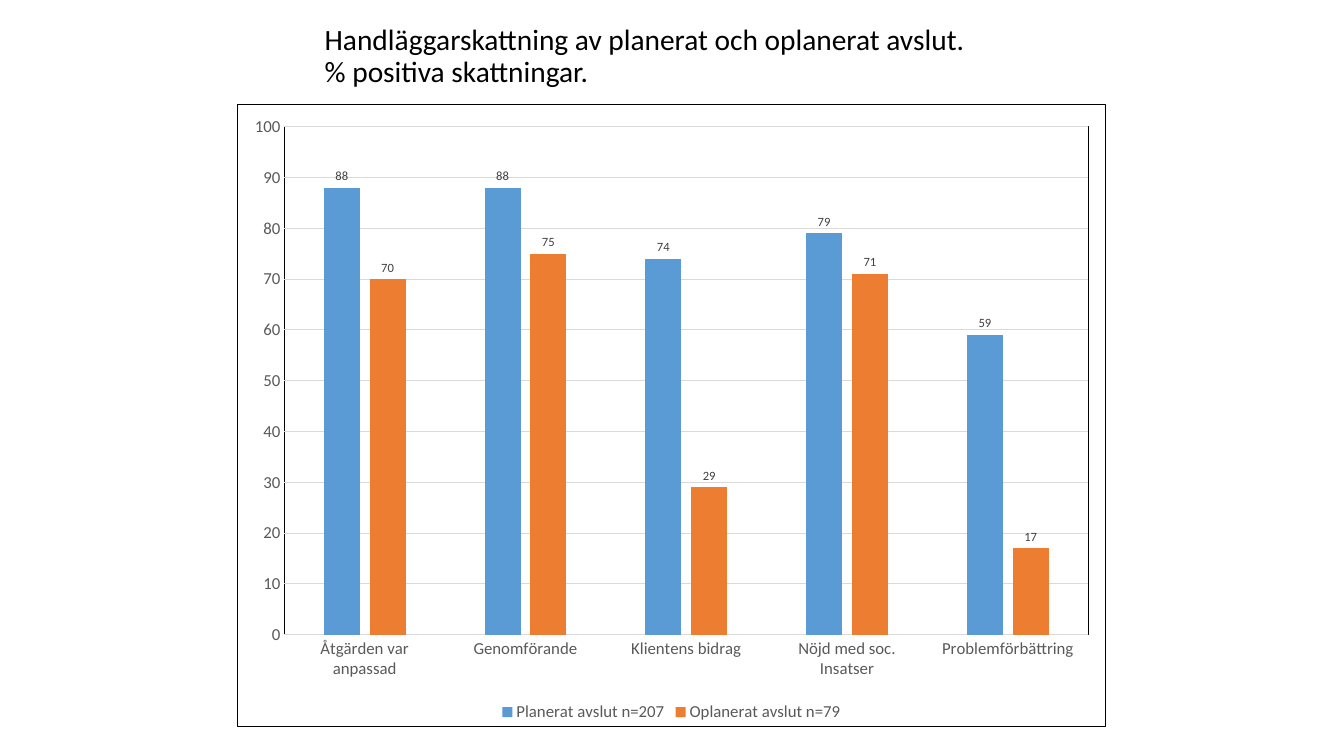
from lxml import etree
from pptx import Presentation
from pptx.chart.data import CategoryChartData
from pptx.dml.color import RGBColor
from pptx.enum.chart import XL_CHART_TYPE, XL_LABEL_POSITION, XL_LEGEND_POSITION, XL_TICK_MARK
from pptx.enum.text import MSO_ANCHOR, MSO_AUTO_SIZE, PP_ALIGN
from pptx.oxml import parse_xml
from pptx.oxml.ns import nsdecls
from pptx.util import Inches, Pt

COLUMNS = XL_CHART_TYPE.COLUMN_CLUSTERED
OUTSIDE = XL_LABEL_POSITION.OUTSIDE_END
BOTTOM_LEGEND = XL_LEGEND_POSITION.BOTTOM
NO_TICK = XL_TICK_MARK.NONE
ANCHOR_BOTTOM = MSO_ANCHOR.BOTTOM
NO_AUTOFIT = MSO_AUTO_SIZE.NONE
LEFT = PP_ALIGN.LEFT

COLORS = {
    "text": "000000",
    "axis": "595959",
    "label": "404040",
    "grid": "D9D9D9",
    "border": "000000",
    "planned": "5B9BD5",
    "unplanned": "ED7D31",
}
CATEGORIES = ["Åtgärden var anpassad", "Genomförande", "Klientens bidrag",
              "Nöjd med soc. Insatser", "Problemförbättring"]
SERIES = [
    ("Planerat avslut n=207", [88, 88, 74, 79, 59], "planned"),
    ("Oplanerat avslut n=79", [70, 75, 29, 71, 17], "unplanned"),
]


class SlideBuilder:
    """Holds the style and the current slide."""

    def __init__(self, prs, font="Calibri"):
        self.font = font
        self.s = prs.slides.add_slide(prs.slide_layouts[5])

    def color(self, name):
        return RGBColor.from_string(COLORS[name])

    def style_font(self, font, size, color):
        font.name = self.font
        font.size = Pt(size)
        font.bold = False
        font.color.rgb = self.color(color)

    def style_line(self, line, color):
        line.color.rgb = self.color(color)
        line.width = Pt(0.75)

    def border(self):
        return parse_xml(
            f'<c:spPr {nsdecls("c", "a")}><a:noFill/><a:ln w="{Pt(0.75)}"><a:solidFill>'
            f'<a:srgbClr val="{COLORS["border"]}"/></a:solidFill></a:ln></c:spPr>')

    def title(self, text, left, top, width, height):
        sp = self.s.shapes.title
        sp.left, sp.top = Inches(left), Inches(top)
        sp.width, sp.height = Inches(width), Inches(height)
        tf = sp.text_frame
        tf.word_wrap = True
        tf.auto_size = NO_AUTOFIT
        tf.vertical_anchor = ANCHOR_BOTTOM
        tf.margin_bottom = Inches(0.15)
        tf.margin_right = Inches(0.2)
        p = tf.paragraphs[0]
        p.alignment = LEFT
        p.line_spacing = 0.9
        r = p.add_run()
        r.text = text
        self.style_font(r.font, 21, "text")

    def column_chart(self, categories, series, left, top, width, height):
        data = CategoryChartData()
        data.categories = categories
        for name, values, _ in series:
            data.add_series(name, values)
        chart = self.s.shapes.add_chart(
            COLUMNS, Inches(left), Inches(top), Inches(width), Inches(height), data).chart
        chart.has_title = False
        self.style_font(chart.font, 10, "text")
        chart.has_legend = True
        chart.legend.position = BOTTOM_LEGEND
        chart.legend.include_in_layout = False
        self.style_font(chart.legend.font, 12, "axis")

        for axis in (chart.category_axis, chart.value_axis):
            axis.major_tick_mark = axis.minor_tick_mark = NO_TICK
            self.style_font(axis.tick_labels.font, 12, "axis")
        self.style_line(chart.category_axis.format.line, "grid")
        values_axis = chart.value_axis
        values_axis.minimum_scale, values_axis.maximum_scale = 0, 100
        values_axis.major_unit = 10
        values_axis.format.line.fill.background()
        values_axis.has_major_gridlines = True
        self.style_line(values_axis.major_gridlines.format.line, "grid")

        plot = chart.plots[0]
        plot.gap_width, plot.overlap = 219, -27
        plot.vary_by_categories = False
        for ser, (_, _, color) in zip(plot.series, series):
            ser.format.fill.solid()
            ser.format.fill.fore_color.rgb = self.color(color)
            labels = ser.data_labels
            labels.show_value = True
            labels.position = OUTSIDE
            self.style_font(labels.font, 9, "label")

        chart_xml = chart.element.find(etree.QName(chart.element).text.replace("chartSpace", "chart"))
        chart_xml.addnext(self.border())
        chart_xml.plotArea.append(self.border())


def main():
    prs = Presentation()
    prs.slide_width, prs.slide_height = Inches(13.33), Inches(7.5)
    slide = SlideBuilder(prs)
    slide.title("Handläggarskattning av planerat och oplanerat avslut. % positiva skattningar.",
                3.12, 0.44, 6.82, 0.59)
    slide.column_chart(CATEGORIES, SERIES, 2.35, 1.03, 8.62, 6.18)
    prs.save("out.pptx")


if __name__ == "__main__":
    main()
